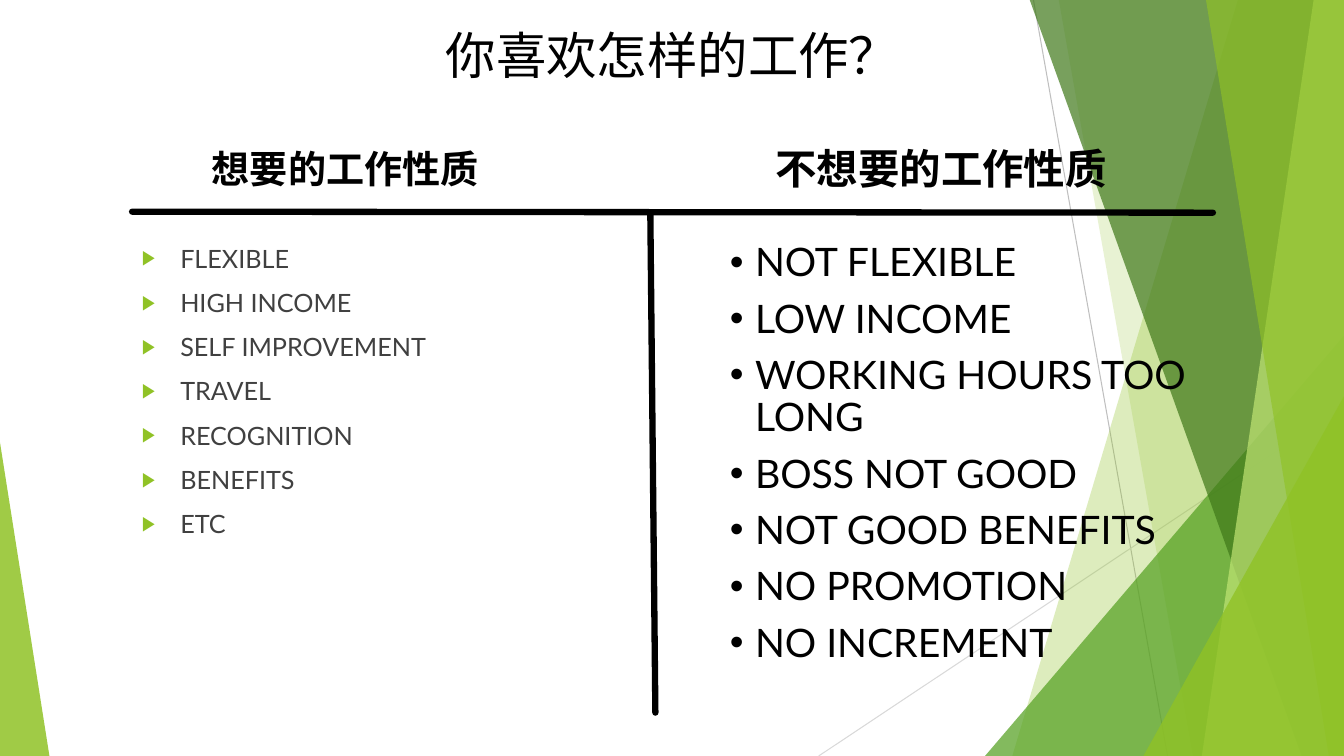
from lxml.etree import SubElement
from pptx import Presentation
from pptx.dml.color import RGBColor
from pptx.enum.shapes import MSO_CONNECTOR, MSO_SHAPE
from pptx.enum.text import MSO_ANCHOR, PP_ALIGN
from pptx.oxml.ns import qn
from pptx.util import Inches, Pt

BLACK = RGBColor(0x00, 0x00, 0x00)
DARK_GRAY = RGBColor(0x40, 0x40, 0x40)
GRAY = RGBColor(0xBF, 0xBF, 0xBF)
LIGHT_GRAY = RGBColor(0xD9, 0xD9, 0xD9)
LIME = RGBColor(0x90, 0xC2, 0x26)
PALE_LIME = RGBColor(0xC0, 0xE4, 0x74)
GREEN = RGBColor(0x54, 0xA0, 0x21)
DARK_GREEN = RGBColor(0x3F, 0x78, 0x19)

FONT = "Lato"
WIDTH, HEIGHT = 13.33, 7.5
BAND_TOP = -0.01

WANTED = ["FLEXIBLE", "HIGH INCOME", "SELF IMPROVEMENT", "TRAVEL",
          "RECOGNITION", "BENEFITS", "ETC"]
UNWANTED = ["NOT FLEXIBLE", "LOW INCOME", "WORKING HOURS TOO LONG",
            "BOSS NOT GOOD", "NOT GOOD BENEFITS", "NO PROMOTION",
            "NO INCREMENT"]


def paint(sp, color, opacity):
    """Fill a shape without outline; opacity is in percent."""
    sp.shadow.inherit = False
    sp.line.fill.background()
    sp.fill.solid()
    sp.fill.fore_color.rgb = color
    clr = sp.fill._xPr.find(qn("a:solidFill"))[0]
    SubElement(clr, qn("a:alpha"), val=str(opacity * 1000))


def add_band(slide, top_x, bottom_x, color, opacity):
    """Add a band from a slanted left edge to the right edge of the slide."""
    fb = slide.shapes.build_freeform(Inches(top_x), Inches(BAND_TOP))
    corners = [(WIDTH, BAND_TOP), (WIDTH, HEIGHT), (bottom_x, HEIGHT)]
    fb.add_line_segments([(Inches(x), Inches(y)) for x, y in corners])
    paint(fb.convert_to_shape(), color, opacity)


def add_triangle(slide, left, top, width, apex, color, opacity):
    """Add a triangle standing on the bottom edge; apex runs from 0 to 1."""
    sp = slide.shapes.add_shape(
        MSO_SHAPE.ISOSCELES_TRIANGLE, Inches(left), Inches(top),
        Inches(width), Inches(HEIGHT - top))
    sp.adjustments[0] = apex
    paint(sp, color, opacity)


def add_line(slide, start, end, color, width, cap="flat"):
    line = slide.shapes.add_connector(
        MSO_CONNECTOR.STRAIGHT, *map(Inches, start + end))
    line.line.color.rgb = color
    line.line.width = Pt(width)
    line.line._ln.set("cap", cap)
    SubElement(line._element.spPr, qn("a:effectLst"))


def add_bullet(p, char, indent, color, percent):
    pPr = p._p.get_or_add_pPr()
    pPr.set("marL", str(Inches(indent)))
    pPr.set("indent", str(-Inches(indent)))
    clr = SubElement(pPr, qn("a:buClr"))
    SubElement(clr, qn("a:srgbClr"), val=str(color))
    SubElement(pPr, qn("a:buSzPct"), val=str(percent * 1000))
    SubElement(pPr, qn("a:buFont"), typeface="Arial")
    SubElement(pPr, qn("a:buChar"), char=char)


def add_text(slide, box, lines, font, para, anchor=MSO_ANCHOR.TOP,
             bullet=None):
    """Add a text box; font and para hold format values by attribute name."""
    tf = slide.shapes.add_textbox(*map(Inches, box)).text_frame
    tf.word_wrap = True
    tf.vertical_anchor = anchor
    for i, line in enumerate(lines):
        p = tf.paragraphs[0] if i == 0 else tf.add_paragraph()
        for name, value in para.items():
            setattr(p, name, value)
        if bullet:
            add_bullet(p, *bullet)
        r = p.add_run()
        r.text = line
        r.font.color.rgb = font["color"]
        for name, value in font.items():
            if name != "color":
                setattr(r.font, name, value)


def text_font(size, color=BLACK, bold=False):
    return {"name": FONT, "size": Pt(size), "bold": bold, "color": color}


def add_background(slide):
    add_line(slide, (10.25, 0), (11.58, HEIGHT), GRAY, 0.75)
    add_line(slide, (WIDTH, 4.03), (8.12, HEIGHT), LIGHT_GRAY, 0.75)
    add_band(slide, 12.28, 10.04, LIME, 30)
    add_band(slide, 10.5, 11.83, LIME, 20)
    add_triangle(slide, 9.77, 3.33, 3.56, 1, GREEN, 72)
    add_band(slide, 10.21, 12.91, DARK_GREEN, 70)
    add_band(slide, 13.03, 11.92, PALE_LIME, 70)
    add_band(slide, 11.96, 13.18, LIME, 65)
    add_triangle(slide, 11.34, 3.93, 1.99, 1, LIME, 80)
    add_triangle(slide, 0, 4.39, 0.49, 0, LIME, 85)


def add_heading(slide, box, text, size, spacing):
    add_text(slide, box, [text], text_font(size, bold=True),
             {"alignment": PP_ALIGN.CENTER, "line_spacing": spacing},
             MSO_ANCHOR.MIDDLE)


def main():
    prs = Presentation()
    prs.slide_width, prs.slide_height = Inches(WIDTH), Inches(HEIGHT)
    slide = prs.slides.add_slide(prs.slide_layouts[6])

    add_background(slide)
    add_text(slide, (0.92, 0.19, 11.5, 1.45), ["你喜欢怎样的工作？"],
             text_font(36), {"alignment": PP_ALIGN.CENTER})
    add_text(slide, (1.31, 2.36, 4.24, 4.71), WANTED,
             text_font(18, DARK_GRAY), {"space_before": Pt(10)},
             bullet=("▶", 0.38, LIME, 80))
    add_line(slide, (1.31, 2.1), (12.03, 2.11), BLACK, 4.5, "rnd")
    add_line(slide, (6.45, 2.11), (6.5, 7.07), BLACK, 4.5, "rnd")
    add_text(slide, (7.14, 2.36, 5.27, 4.71), UNWANTED, text_font(28),
             {"space_before": Pt(10), "line_spacing": 0.9},
             bullet=("•", 0.25, BLACK, 100))
    add_heading(slide, (1.89, 1.32, 3.07, 0.79), "想要的工作性质", 27.2, 0.8)
    add_heading(slide, (7.49, 1.3, 3.69, 0.79), "不想要的工作性质", 29.6, 0.9)

    prs.save("out.pptx")


if __name__ == "__main__":
    main()
